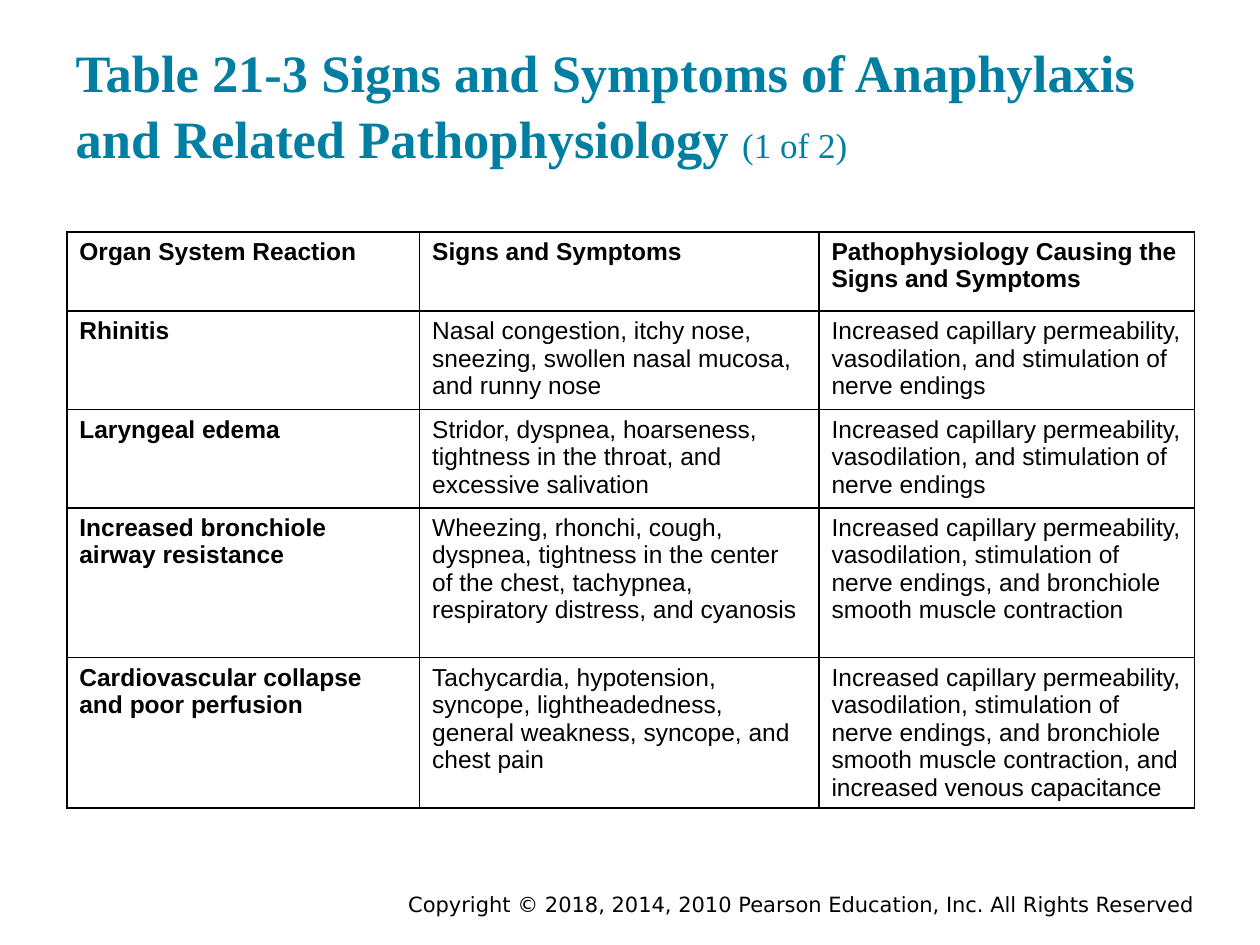
from lxml import etree
from pptx import Presentation
from pptx.dml.color import RGBColor
from pptx.enum.text import MSO_ANCHOR, MSO_AUTO_SIZE, PP_ALIGN
from pptx.oxml.ns import qn
from pptx.util import Inches, Pt

BOTTOM, MIDDLE = MSO_ANCHOR.BOTTOM, MSO_ANCHOR.MIDDLE
LEFT, RIGHT = PP_ALIGN.LEFT, PP_ALIGN.RIGHT
NO_AUTOFIT = MSO_AUTO_SIZE.NONE
TITLE_ONLY = 5


def add_text(para, text, size=14, font="Arial", color="000000", bold=False, align=LEFT):
    para.alignment = align
    span = para.add_run()
    span.text = text
    span.font.size = Pt(size)
    span.font.name = font
    span.font.bold = bold
    span.font.color.rgb = RGBColor.from_string(color)


def add_borders(cell, color="000000", width=1):
    properties = cell._tc.get_or_add_tcPr()
    for side in ("lnL", "lnR", "lnT", "lnB"):
        line = etree.SubElement(properties, qn(f"a:{side}"), w=str(Pt(width)))
        fill = etree.SubElement(line, qn("a:solidFill"))
        etree.SubElement(fill, qn("a:srgbClr"), val=color)


deck = Presentation()
deck.slide_width, deck.slide_height = Inches(10), Inches(7.5)
page = deck.slides.add_slide(deck.slide_layouts[TITLE_ONLY])

# Title
title = page.shapes.title
title.left, title.top = Inches(0.5), Inches(0.24)
title.width, title.height = Inches(9), Inches(1.2)
frame = title.text_frame
frame.auto_size = NO_AUTOFIT
frame.word_wrap = True
frame.vertical_anchor = BOTTOM
frame.margin_left = frame.margin_right = Inches(0.1)
frame.margin_top = frame.margin_bottom = Inches(0.1)
para = frame.paragraphs[0]
para.line_spacing = 1.04
title_format = {"font": "Times New Roman", "color": "007FA3"}
add_text(para, "Table 21-3 Signs and Symptoms of Anaphylaxis and Related Pathophysiology ",
         size=30, bold=True, **title_format)
add_text(para, "(1 of 2)", size=20, **title_format)

# Table
permeability = "Increased capillary permeability, vasodilation, "
nerve_endings = permeability + "and stimulation of nerve endings"
muscle_contraction = (permeability + "stimulation of nerve endings, "
                      "and bronchiole smooth muscle contraction")
rows = [
    ("Organ System Reaction", "Signs and Symptoms",
     "Pathophysiology Causing the Signs and Symptoms"),
    ("Rhinitis",
     "Nasal congestion, itchy nose, sneezing, swollen nasal mucosa, and runny nose",
     nerve_endings),
    ("Laryngeal edema",
     "Stridor, dyspnea, hoarseness, tightness in the throat, and excessive salivation",
     nerve_endings),
    ("Increased bronchiole airway resistance",
     "Wheezing, rhonchi, cough, dyspnea, tightness in the center of the chest, "
     "tachypnea, respiratory distress, and cyanosis",
     muscle_contraction),
    ("Cardiovascular collapse and poor perfusion",
     "Tachycardia, hypotension, syncope, lightheadedness, general weakness, "
     "syncope, and chest pain",
     muscle_contraction + ", and increased venous capacitance"),
]
column_widths = [2.8, 3.17, 2.98]
row_heights = [0.63, 0.78, 0.78, 1.19, 1.19]

table = page.shapes.add_table(
    len(rows), len(column_widths), Inches(0.53), Inches(1.84),
    Inches(sum(column_widths)), Inches(sum(row_heights))).table
table.horz_banding = False
for column, width in zip(table.columns, column_widths):
    column.width = Inches(width)
for row, height in zip(table.rows, row_heights):
    row.height = Inches(height)
for r, texts in enumerate(rows):
    for c, text in enumerate(texts):
        cell = table.cell(r, c)
        add_borders(cell)
        cell.fill.background()
        add_text(cell.text_frame.paragraphs[0], text, bold=r == 0 or c == 0)

# Copyright line
box = page.shapes.add_textbox(Inches(2.92), Inches(7.05), Inches(6.66), Inches(0.25))
frame = box.text_frame
frame.word_wrap = True
frame.vertical_anchor = MIDDLE
add_text(frame.paragraphs[0],
         "Copyright © 2018, 2014, 2010 Pearson Education, Inc. All Rights Reserved",
         size=12, font="DejaVu Sans", align=RIGHT)

deck.save("out.pptx")
